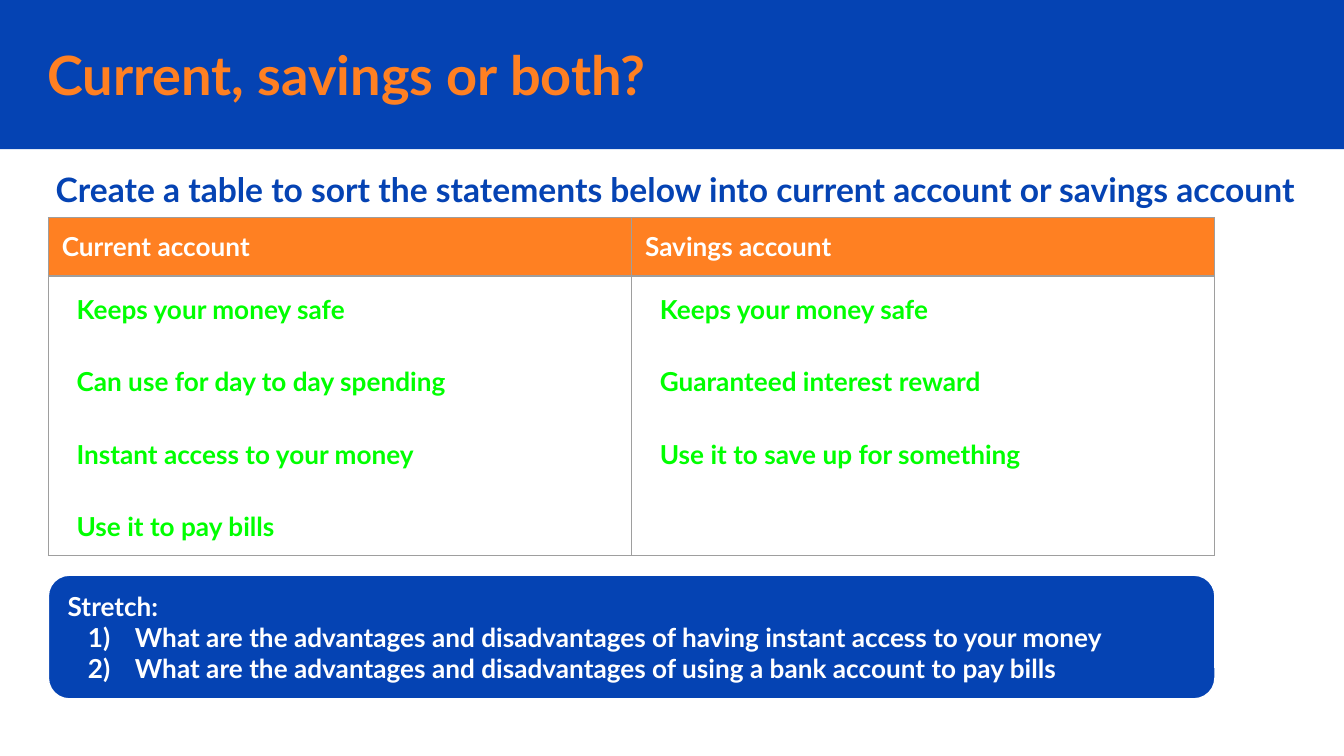
from dataclasses import dataclass

import pptx
import pptx.dml.color
import pptx.enum.shapes
import pptx.enum.text
import pptx.oxml
import pptx.oxml.ns
import pptx.util
from pptx.util import Inches


@dataclass(frozen=True)
class Theme:
    font: str = "Lato"
    blue: str = "0543B3"
    orange: str = "FF8022"
    green: str = "00FF00"
    white: str = "FFFFFF"
    grey: str = "9E9E9E"
    title_size: int = 29
    task_size: int = 18
    body_size: int = 14
    line_width: float = 0.75
    loose_lines: float = 1.15


THEME = Theme()

ACCOUNTS = {
    "Current account": [
        "Keeps your money safe",
        "Can use for day to day spending",
        "Instant access to your money",
        "Use it to pay bills",
    ],
    "Savings account": [
        "Keeps your money safe",
        "Guaranteed interest reward",
        "Use it to save up for something",
    ],
}
STRETCH_QUESTIONS = [
    "What are the advantages and disadvantages of having instant access to your money",
    "What are the advantages and disadvantages of using a bank account to pay bills",
]


def rgb(color):
    return pptx.dml.color.RGBColor.from_string(color)


def paint(shape, fill, line=None):
    shape.shadow.inherit = False
    shape.fill.solid()
    shape.fill.fore_color.rgb = rgb(fill)
    if line:
        shape.line.color.rgb = rgb(line)
        shape.line.width = pptx.util.Pt(THEME.line_width)
    else:
        shape.line.fill.background()


def set_frame(frame, anchor=pptx.enum.text.MSO_ANCHOR.TOP):
    frame.word_wrap = True
    frame.vertical_anchor = anchor
    frame.margin_left = frame.margin_right = Inches(0.1)
    frame.margin_top = frame.margin_bottom = Inches(0.1)


def write(paragraph, text, size, color, align=pptx.enum.text.PP_ALIGN.LEFT):
    paragraph.alignment = align
    run = paragraph.add_run()
    run.text = text
    run.font.name = THEME.font
    run.font.size = pptx.util.Pt(size)
    run.font.bold = True
    run.font.color.rgb = rgb(color)


def indent(paragraph, left, first=0):
    properties = paragraph._p.get_or_add_pPr()
    properties.set("marL", str(Inches(left)))
    properties.set("indent", str(Inches(first)))


def number(paragraph, color):
    properties = paragraph._p.get_or_add_pPr()
    namespace = pptx.oxml.ns.nsdecls("a")
    for element in (
        f'<a:buClr {namespace}><a:srgbClr val="{color}"/></a:buClr>',
        f'<a:buFont {namespace} typeface="{THEME.font}"/>',
        f'<a:buAutoNum {namespace} type="arabicParenR"/>',
    ):
        properties.append(pptx.oxml.parse_xml(element))


def add_title(slide, text):
    band = slide.shapes.add_shape(
        pptx.enum.shapes.MSO_SHAPE.RECTANGLE, 0, 0, Inches(10), Inches(1.11))
    paint(band, THEME.blue)
    title = slide.shapes.title
    # The band goes behind the title placeholder.
    title._element.addprevious(band._element)
    title.left, title.top = Inches(0.25), Inches(0.27)
    title.width, title.height = Inches(8.46), Inches(0.56)
    set_frame(title.text_frame, pptx.enum.text.MSO_ANCHOR.MIDDLE)
    title.text_frame.auto_size = pptx.enum.text.MSO_AUTO_SIZE.NONE
    write(title.text_frame.paragraphs[0], text, THEME.title_size, THEME.orange)


def add_task(slide, text):
    box = slide.shapes.add_textbox(
        Inches(0.05), Inches(1.11), Inches(9.84), Inches(0.5))
    set_frame(box.text_frame)
    paragraph = box.text_frame.paragraphs[0]
    indent(paragraph, 0.11)
    paragraph.line_spacing = THEME.loose_lines
    write(paragraph, text, THEME.task_size, THEME.blue,
          pptx.enum.text.PP_ALIGN.CENTER)


def set_borders(cell):
    properties = cell._tc.get_or_add_tcPr()
    width = pptx.util.Pt(THEME.line_width)
    for position, side in enumerate("LRTB"):
        border = pptx.oxml.parse_xml(
            f'<a:ln{side} {pptx.oxml.ns.nsdecls("a")} w="{width}"><a:solidFill>'
            f'<a:srgbClr val="{THEME.grey}"/></a:solidFill></a:ln{side}>')
        properties.insert(position, border)


def fill_header(cell, text):
    cell.fill.solid()
    cell.fill.fore_color.rgb = rgb(THEME.orange)
    write(cell.text_frame.paragraphs[0], text, THEME.body_size, THEME.white)


def fill_statements(cell, statements):
    cell.fill.background()
    frame = cell.text_frame
    for position, statement in enumerate(statements):
        paragraph = frame.add_paragraph() if position else frame.paragraphs[0]
        indent(paragraph, 0.11)
        paragraph.line_spacing = THEME.loose_lines
        if position:
            paragraph.space_before = pptx.util.Pt(19.3)
        write(paragraph, statement, THEME.body_size, THEME.green)


def add_account_table(slide, accounts):
    table = slide.shapes.add_table(
        2, len(accounts), Inches(0.36), Inches(1.62),
        Inches(8.68), Inches(2.51)).table
    table.horz_banding = False
    for row, height in zip(table.rows, (0.43, 2.08)):
        row.height = Inches(height)
    for column, (account, statements) in enumerate(accounts.items()):
        fill_header(table.cell(0, column), account)
        fill_statements(table.cell(1, column), statements)
    for cell in table.iter_cells():
        cell.margin_left = cell.margin_right = Inches(0.1)
        cell.margin_top = cell.margin_bottom = Inches(0.1)
        set_borders(cell)


def add_stretch_box(slide, heading, questions):
    box = slide.shapes.add_shape(
        pptx.enum.shapes.MSO_SHAPE.ROUNDED_RECTANGLE,
        Inches(0.36), Inches(4.28), Inches(8.68), Inches(0.92))
    box.adjustments[0] = 0.17
    paint(box, THEME.blue, THEME.white)
    frame = box.text_frame
    set_frame(frame, pptx.enum.text.MSO_ANCHOR.MIDDLE)
    write(frame.paragraphs[0], heading, THEME.body_size, THEME.white)
    for question in questions:
        paragraph = frame.add_paragraph()
        indent(paragraph, 0.5, -0.35)
        number(paragraph, THEME.white)
        write(paragraph, question, THEME.body_size, THEME.white)


def main():
    presentation = pptx.Presentation()
    presentation.slide_width = Inches(10)
    presentation.slide_height = presentation.slide_width * 9 // 16
    title_only = presentation.slide_layouts[5]
    slide = presentation.slides.add_slide(title_only)
    add_title(slide, "Current, savings or both?")
    add_task(slide, "Create a table to sort the statements below into "
                    "current account or savings account")
    add_account_table(slide, ACCOUNTS)
    add_stretch_box(slide, "Stretch:", STRETCH_QUESTIONS)
    presentation.save("out.pptx")


if __name__ == "__main__":
    main()
